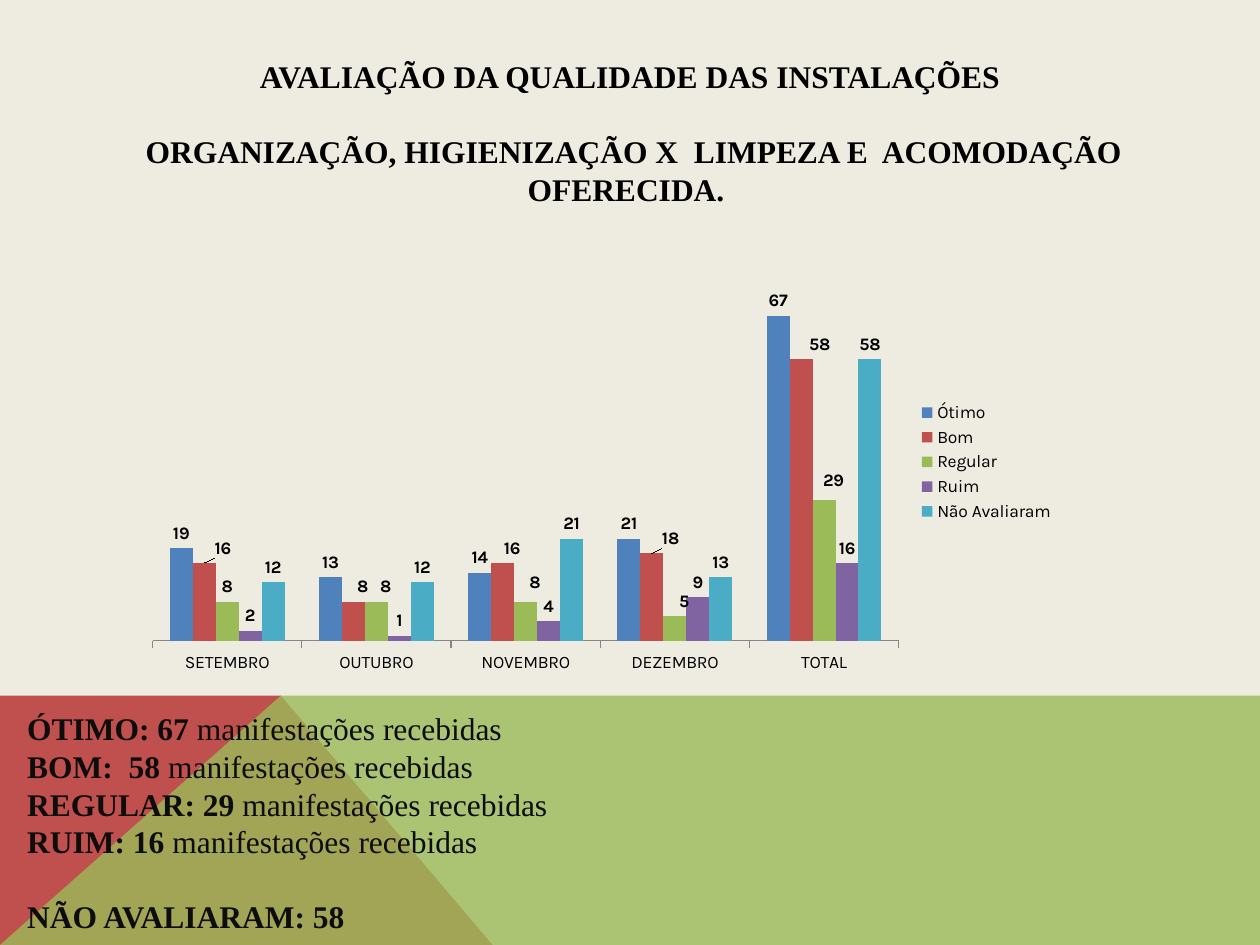
from lxml.etree import SubElement
from pptx import Presentation
from pptx.chart.data import CategoryChartData
from pptx.dml.color import RGBColor
from pptx.enum.chart import XL_CHART_TYPE, XL_LABEL_POSITION, XL_LEGEND_POSITION, XL_TICK_MARK
from pptx.enum.text import MSO_ANCHOR, PP_ALIGN
from pptx.oxml import parse_xml
from pptx.oxml.ns import nsdecls, qn
from pptx.util import Pt

THEME = {
    "back": "EEECE1", "black": "000000", "ink": "0D0D0D", "axis": "868686",
    "red": "C0504D", "green": "9BBB59",
    "serif": "Times New Roman", "sans": "Karla",
    "text": 18, "chart": 10, "lead": 21.5,
}
WIDE, HIGH = 720, 540
TITLE = [
    [("AVALIAÇÃO DA QUALIDADE DAS INSTALAÇÕES", True)],
    [(" ORGANIZAÇÃO, HIGIENIZAÇÃO X  LIMPEZA E  ACOMODAÇÃO OFERECIDA. ", True)],
]
NOUN = "manifestações recebidas"
COUNTS = ["ÓTIMO: 67 ", "BOM:  58 ", "REGULAR: 29 ", "RUIM: 16 "]
NOTES = [[(count, True), (NOUN, False)] for count in COUNTS]
NOTES.append([("NÃO AVALIARAM: 58", True)])
MONTHS = ["SETEMBRO", "OUTUBRO", "NOVEMBRO", "DEZEMBRO", "TOTAL"]
SERIES = [
    ("Ótimo", "4F81BD", [19, 13, 14, 21, 67]),
    ("Bom", THEME["red"], [16, 8, 16, 18, 58]),
    ("Regular", THEME["green"], [8, 8, 8, 5, 29]),
    ("Ruim", "8064A2", [2, 1, 4, 9, 16]),
    ("Não Avaliaram", "4BACC6", [12, 12, 21, 13, 58]),
]
SHIFTS = {
    "Bom": {0: (0.02, 0), 1: (0.01, 0), 2: (0.01, 0), 3: (0.02, 0), 4: (0.02, 0)},
    "Regular": {1: (0.01, 0), 2: (0.01, -0.01), 3: (0.01, 0), 4: (0.01, -0.01)},
}
PLOT = {"x": 0.02, "y": 0.02, "w": 0.8, "h": 0.89}
EDGE, PEAK, FOOT = 397.5, 160.5, 281.5
BANDS = [
    (THEME["red"], 100, [(0, HIGH), (0, EDGE), (PEAK, EDGE), (FOOT, HIGH)]),
    (THEME["green"], 80, [(0, HIGH), (PEAK, EDGE), (WIDE, EDGE), (WIDE, HIGH)]),
]


def tint(name):
    """Return a colour from its hex code."""
    return RGBColor.from_string(name)


def write(slide, box, lines, color, align=PP_ALIGN.LEFT, anchor=MSO_ANCHOR.TOP, gap=None):
    """Add a text box, with one blank line of space before paragraph gap."""
    frame = slide.shapes.add_textbox(*map(Pt, box)).text_frame
    frame.word_wrap = True
    frame.vertical_anchor = anchor
    for i, line in enumerate(lines):
        para = frame.paragraphs[0] if i == 0 else frame.add_paragraph()
        para.alignment = align
        para.line_spacing = Pt(THEME["lead"])
        para.space_before = Pt(THEME["lead"] if i == gap else 0)
        for text, bold in line:
            run = para.add_run()
            run.text = text
            run.font.name = THEME["serif"]
            run.font.size = Pt(THEME["text"])
            run.font.bold = bold
            run.font.color.rgb = tint(color)


def band(slide, color, alpha, spots):
    """Add one filled polygon."""
    spots = [(Pt(x), Pt(y)) for x, y in spots]
    form = slide.shapes.build_freeform(*spots[0])
    form.add_line_segments(spots[1:], close=True)
    shape = form.convert_to_shape()
    shape.shadow.inherit = False
    shape.fill.solid()
    shape.fill.fore_color.rgb = tint(color)
    shape.line.fill.background()
    if alpha < 100:
        node = shape.fill._xPr.find(".//" + qn("a:srgbClr"))
        SubElement(node, qn("a:alpha"), val=str(alpha * 1000))


def layout(sizes, inner=False):
    """Return a manual chart layout."""
    body = '<c:layoutTarget val="inner"/>' if inner else ""
    if inner:
        body += '<c:xMode val="edge"/><c:yMode val="edge"/>'
    body += "".join(f'<c:{key} val="{val}"/>' for key, val in sizes.items())
    return parse_xml(f'<c:layout {nsdecls("c")}><c:manualLayout>{body}</c:manualLayout></c:layout>')


def style(font, bold=False):
    """Give a chart font its theme look."""
    font.name = THEME["sans"]
    font.size = Pt(THEME["chart"])
    font.bold = bold
    font.color.rgb = tint(THEME["black"])


def graph(slide, box):
    """Add the column chart with its labels."""
    data = CategoryChartData()
    data.categories = MONTHS
    for name, _, vals in SERIES:
        data.add_series(name, vals)
    chart = slide.shapes.add_chart(XL_CHART_TYPE.COLUMN_CLUSTERED, *map(Pt, box), data).chart
    style(chart.font)
    chart.has_title = False
    chart.has_legend = True
    chart.legend.position = XL_LEGEND_POSITION.RIGHT
    chart.legend.include_in_layout = False
    scale = chart.value_axis
    scale.visible = False
    scale.has_major_gridlines = False
    scale.minimum_scale, scale.maximum_scale = 0, 80
    base = chart.category_axis
    base.major_tick_mark = XL_TICK_MARK.OUTSIDE
    base.format.line.color.rgb = tint(THEME["axis"])
    plot = chart.plots[0]
    plot.gap_width, plot.overlap, plot.vary_by_categories = 150, 0, False
    area = chart._chartSpace.find(".//" + qn("c:plotArea"))
    for old in area.findall(qn("c:layout")):
        area.remove(old)
    area.insert(0, layout(PLOT, inner=True))
    for bars, (name, color, _) in zip(plot.series, SERIES):
        bars.format.fill.solid()
        bars.format.fill.fore_color.rgb = tint(color)
        tags = bars.data_labels
        tags.show_value = True
        tags.position = XL_LABEL_POSITION.OUTSIDE_END
        style(tags.font, bold=True)
        for i, (x, y) in SHIFTS.get(name, {}).items():
            tag = bars.points[i].data_label
            style(tag.font, bold=True)
            tag.position = XL_LABEL_POSITION.OUTSIDE_END
            node = bars._element.xpath(f"c:dLbls/c:dLbl[c:idx/@val='{i}']")[0]
            node.insert(1, layout({"x": x, "y": y}))


def main():
    """Build and save the slide."""
    deck = Presentation()
    deck.slide_width, deck.slide_height = Pt(WIDE), Pt(HIGH)
    slide = deck.slides.add_slide(deck.slide_layouts[6])
    slide.background.fill.solid()
    slide.background.fill.fore_color.rgb = tint(THEME["back"])
    for item in BANDS:
        band(slide, *item)
    write(slide, (34, 29, 652, 93.5), TITLE, THEME["black"],
          align=PP_ALIGN.CENTER, anchor=MSO_ANCHOR.MIDDLE, gap=1)
    write(slide, (8.5, 402, 315.5, 138), NOTES, THEME["ink"], gap=len(NOTES) - 1)
    graph(slide, (76.5, 139.5, 533, 249))
    deck.save("out.pptx")


if __name__ == "__main__":
    main()
